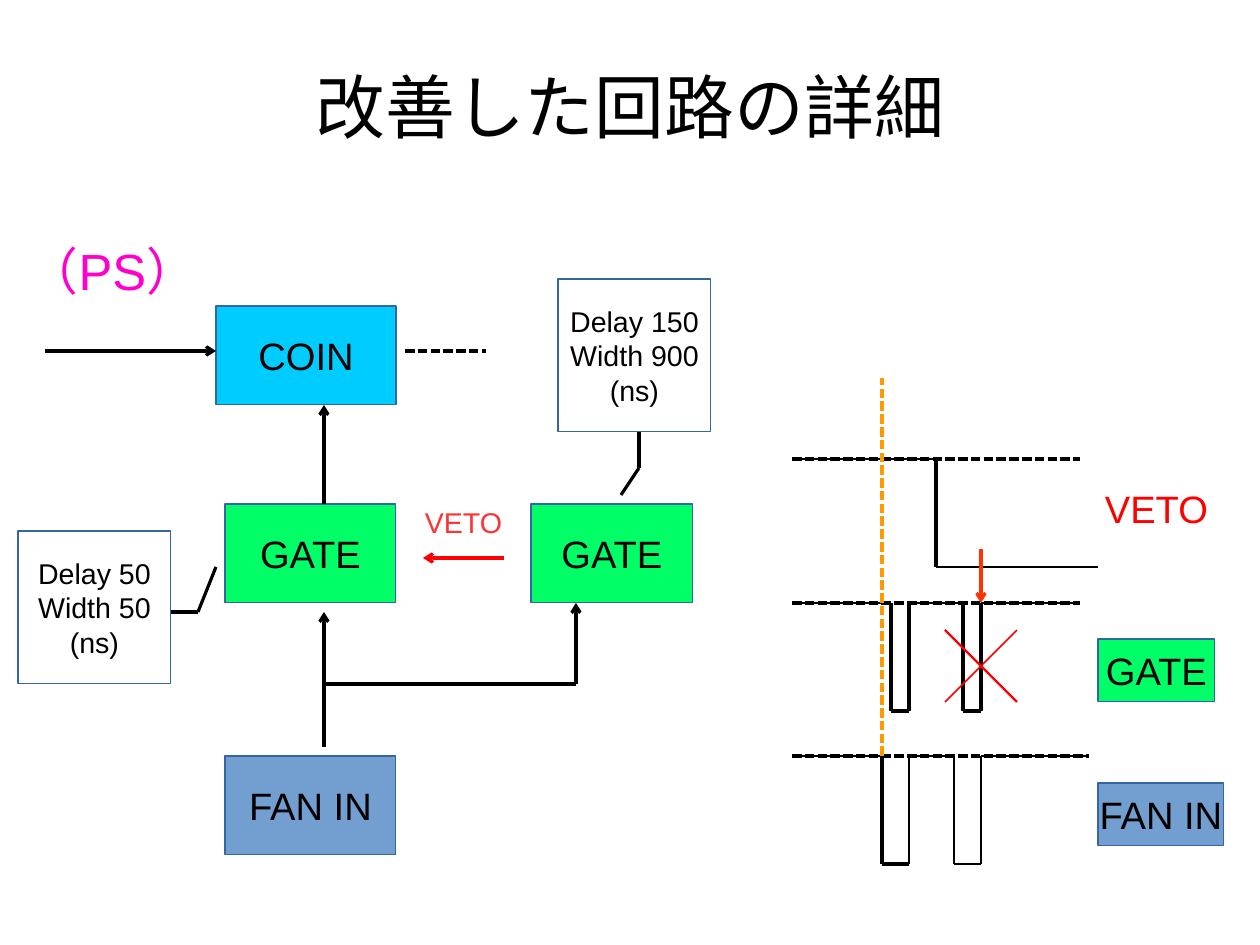
from itertools import pairwise

from lxml import etree
from pptx import Presentation
from pptx.dml.color import RGBColor
from pptx.enum.dml import MSO_LINE
from pptx.enum.shapes import MSO_CONNECTOR, MSO_SHAPE
from pptx.enum.text import MSO_ANCHOR, PP_ALIGN
from pptx.oxml.ns import qn
from pptx.util import Pt

CENTER = PP_ALIGN.CENTER
MIDDLE = MSO_ANCHOR.MIDDLE
RECT = MSO_SHAPE.RECTANGLE
STRAIGHT = MSO_CONNECTOR.STRAIGHT
DASH = MSO_LINE.SQUARE_DOT

STEP = 5.67  # 2 mm grid, in points
BOLD = 1.5
COLORS = {
    "black": "000000", "white": "FFFFFF", "edge": "3465A4",
    "green": "00FF66", "blue": "729FCF", "cyan": "00CCFF",
    "pink": "FF00CC", "red": "FF0000", "rose": "FF3333",
    "flame": "FF3300", "orange": "FF9900",
}


def grid(n):
    """Turn grid steps into a length."""
    return Pt(round(n * STEP, 2))


def color(name):
    return RGBColor.from_string(COLORS[name])


def write(frame, text, size=24, ink="black", font="Arial", pad=(7.2, 3.6)):
    """Fill a text frame with centred lines, one paragraph each."""
    frame.word_wrap = False
    frame.vertical_anchor = MIDDLE
    frame.margin_left = frame.margin_right = Pt(pad[0])
    frame.margin_top = frame.margin_bottom = Pt(pad[1])
    for i, line in enumerate(text.split("\n")):
        para = frame.add_paragraph() if i else frame.paragraphs[0]
        para.alignment = CENTER
        run = para.add_run()
        run.text = line
        run.font.size = Pt(size)
        run.font.name = font
        run.font.color.rgb = color(ink)


class Board:
    """Draws on one slide; all places are in grid steps."""

    def __init__(self, slide):
        self.shapes = slide.shapes

    def title(self, text, *place):
        box = self.shapes.add_textbox(*map(grid, place))
        write(box.text_frame, text, size=44, pad=(0, 0))
        box.text_frame.word_wrap = True

    def block(self, text, *place, fill=None, edge="edge", **style):
        box = self.shapes.add_shape(RECT, *map(grid, place))
        box.shadow.inherit = False
        if fill:
            box.fill.solid()
            box.fill.fore_color.rgb = color(fill)
        else:
            box.fill.background()
        box.line.color.rgb = color(edge)
        box.line.width = Pt(0)
        write(box.text_frame, text, **style)

    def line(self, start, end, ink="black", width=0, dash=None, arrow=False):
        link = self.shapes.add_connector(STRAIGHT, *map(grid, start + end))
        link.line.color.rgb = color(ink)
        link.line.width = Pt(width)
        if dash:
            link.line.dash_style = dash
        props = link.line._get_or_add_ln()
        if arrow:
            etree.SubElement(props, qn("a:tailEnd"), type="arrow")
        etree.SubElement(props.getparent(), qn("a:effectLst"))

    def arrow(self, start, end, ink="black"):
        self.line(start, end, ink=ink, arrow=True)

    def trace(self, points, widths=None):
        """Join the points in turn, each stretch with its own width."""
        widths = widths or [0] * (len(points) - 1)
        for (start, end), width in zip(pairwise(points), widths):
            self.line(start, end, width=width)

    def pulse(self, top, low, stops, widths):
        """Draw a level line with two dips over its dashed base."""
        left, a, b, c, d, right = stops
        self.line((left, top), (right, top), dash=DASH)
        self.trace([(left, top), (a, top), (a, low), (b, low), (b, top),
                    (c, top), (c, low), (d, low), (d, top), (right, top)],
                   widths)


def main():
    deck = Presentation()
    deck.slide_width, deck.slide_height = grid(140), grid(105)
    board = Board(deck.slides.add_slide(deck.slide_layouts[6]))

    board.title("改善した回路の詳細", 7, 3, 126, 17.5)

    # Circuit
    board.block("（PS）", 3, 26, 19, 8, fill="white", edge="white",
                size=32, ink="pink")
    board.block("VETO", 46, 55, 11, 6, fill="white", edge="white",
                size=18, ink="rose")
    board.block("COIN", 24, 34, 20, 11, fill="cyan")
    board.block("GATE", 25, 56, 19, 11, fill="green")
    board.block("GATE", 59, 56, 18, 11, fill="green")
    board.block("FAN IN", 25, 84, 19, 11, fill="blue")
    board.block("Delay 50\nWidth 50\n(ns)", 2, 59, 17, 17, size=18)
    board.block("Delay 150\nWidth 900\n(ns)", 62, 31, 17, 17, size=18)

    board.arrow((5, 39), (24, 39))
    board.arrow((36, 56), (36, 45))
    board.arrow((36, 83), (36, 68))
    board.line((36, 76), (64, 76))
    board.arrow((64, 76), (64, 67))
    board.arrow((56, 62), (47, 62), ink="red")
    board.line((45, 39), (54, 39), dash=DASH)
    board.trace([(19, 68), (22, 68), (24, 63)])
    board.trace([(71, 48), (71, 52), (69, 55)])

    # Timing chart
    board.line((88, 51), (120, 51), dash=DASH)
    board.trace([(88, 51), (104, 51), (104, 63), (122, 63)], [BOLD, 0, BOLD])
    board.pulse(67, 79, (88, 99, 101, 107, 109, 120),
                [BOLD, 0, 0, 0, BOLD, 0, 0, 0, BOLD])
    board.pulse(84, 96, (88, 98, 101, 106, 109, 121),
                [BOLD, 0, 0] + [BOLD] * 6)
    board.line((98, 84), (98, 42), ink="orange", dash=DASH)
    board.arrow((109, 61), (109, 67), ink="flame")
    board.line((105, 70), (113, 78), ink="red", width=BOLD)
    board.line((113, 70), (105, 78), ink="red", width=1)

    board.block("VETO", 122, 53, 13, 7, edge="white", ink="red")
    board.block("GATE", 122, 71, 13, 7, fill="green")
    board.block("FAN IN", 122, 87, 14, 7, fill="blue")

    deck.save("out.pptx")


if __name__ == "__main__":
    main()
